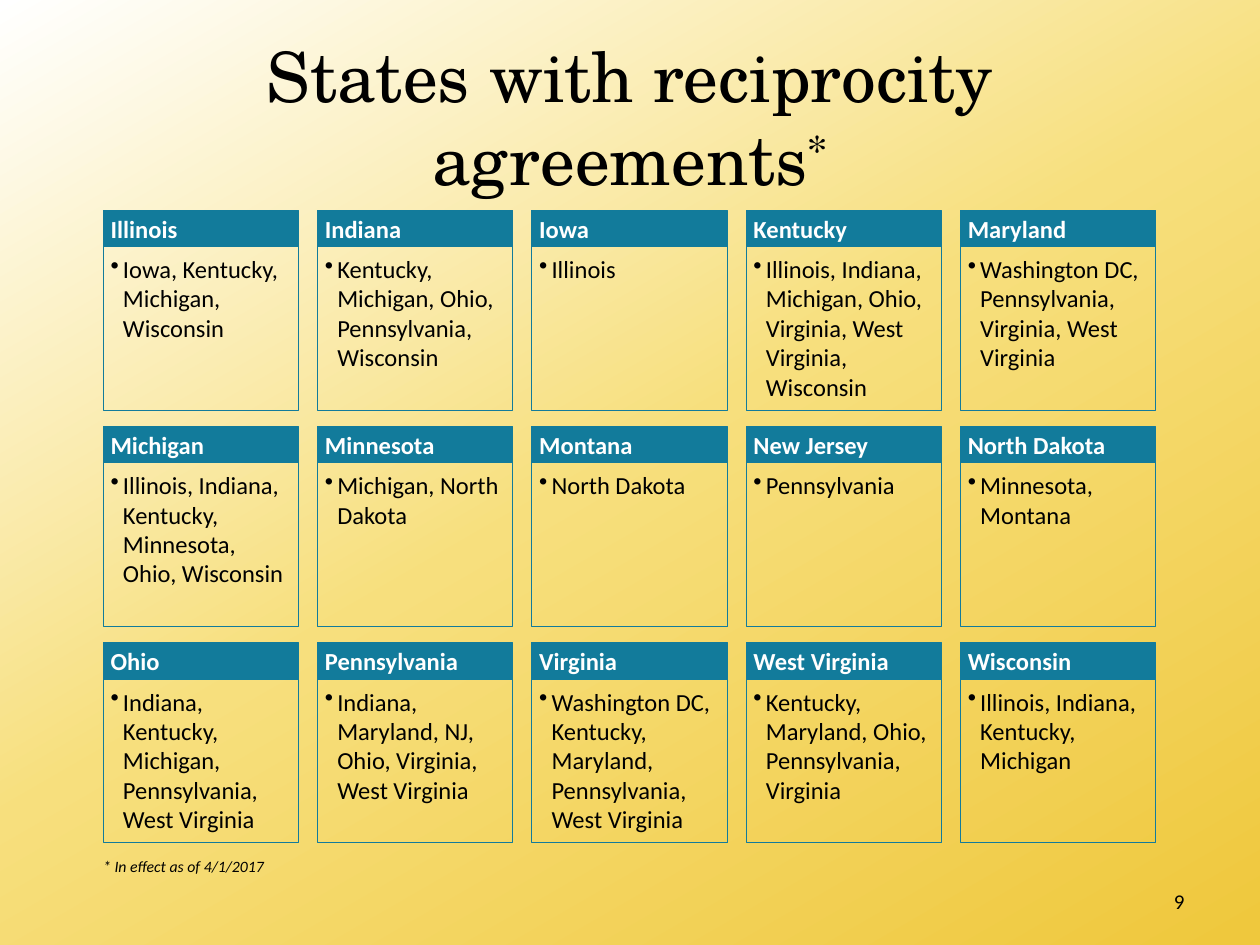
from copy import deepcopy

from lxml import etree
from pptx import Presentation
from pptx.dml.color import RGBColor
from pptx.enum.shapes import MSO_SHAPE
from pptx.enum.text import MSO_ANCHOR, MSO_AUTO_SIZE, PP_ALIGN
from pptx.oxml.ns import qn
from pptx.util import Cm, Pt

RECTANGLE = MSO_SHAPE.RECTANGLE
TOP, MIDDLE = MSO_ANCHOR.TOP, MSO_ANCHOR.MIDDLE
LEFT, CENTER, RIGHT = PP_ALIGN.LEFT, PP_ALIGN.CENTER, PP_ALIGN.RIGHT
NO_AUTOFIT = MSO_AUTO_SIZE.NONE

COLORS = {
    "black": "000000",
    "white": "FFFFFF",
    "teal": "127B9B",
    "pale_gold": "F7DF7D",
    "gold": "EFC83D",
}
BODY_FONT, TITLE_FONT = "Calibri", "TeX Gyre Schola"
BACKGROUND_STOPS = [(0, "white"), (0.49, "pale_gold"), (0.99, "gold")]
COLUMNS = 5
AGREEMENTS = [
    ("Illinois", "Iowa, Kentucky, Michigan, Wisconsin"),
    ("Indiana", "Kentucky, Michigan, Ohio, Pennsylvania, Wisconsin"),
    ("Iowa", "Illinois"),
    ("Kentucky", "Illinois, Indiana, Michigan, Ohio, Virginia, West Virginia, Wisconsin"),
    ("Maryland", "Washington DC, Pennsylvania, Virginia, West Virginia"),
    ("Michigan", "Illinois, Indiana, Kentucky, Minnesota, Ohio, Wisconsin"),
    ("Minnesota", "Michigan, North Dakota"),
    ("Montana", "North Dakota"),
    ("New Jersey", "Pennsylvania"),
    ("North Dakota", "Minnesota, Montana"),
    ("Ohio", "Indiana, Kentucky, Michigan, Pennsylvania, West Virginia"),
    ("Pennsylvania", "Indiana, Maryland, NJ, Ohio, Virginia, West Virginia"),
    ("Virginia", "Washington DC, Kentucky, Maryland, Pennsylvania, West Virginia"),
    ("West Virginia", "Kentucky, Maryland, Ohio, Pennsylvania, Virginia"),
    ("Wisconsin", "Illinois, Indiana, Kentucky, Michigan"),
]


def rgb(name):
    """Return the named colour."""
    return RGBColor.from_string(COLORS[name])


def write_text(frame, text, size=14, font=BODY_FONT, color="black", bold=False,
               italic=False, align=LEFT, anchor=TOP, inset=None, after=0):
    """Write one formatted paragraph into a text frame and return it."""
    frame.word_wrap = True
    frame.auto_size = NO_AUTOFIT
    frame.vertical_anchor = anchor
    if inset is not None:
        frame.margin_left = frame.margin_right = Cm(inset)
        frame.margin_top = frame.margin_bottom = Cm(inset)
    para = frame.paragraphs[0]
    para.alignment = align
    para.space_before, para.space_after = Pt(0), Pt(after)
    span = para.add_run()
    span.text = text
    span.font.size, span.font.name = Pt(size), font
    span.font.bold, span.font.italic = bold, italic
    span.font.color.rgb = rgb(color)
    return para


def add_bullet(para, indent):
    """Give a paragraph a round bullet with a hanging indent."""
    para.level = 1
    properties = para._p.get_or_add_pPr()
    properties.set("marL", str(Cm(indent)))
    properties.set("indent", str(-Cm(indent)))
    etree.SubElement(properties, qn("a:buChar")).set("char", "•")


def paint_background(page):
    """Fill the page with a diagonal three-colour gradient."""
    fill = page.background.fill
    fill.gradient()
    fill.gradient_angle = 300
    stop_list = page.element.find(".//" + qn("a:gsLst"))
    stop_list.append(deepcopy(stop_list[-1]))
    for stop, (position, color) in zip(fill.gradient_stops, BACKGROUND_STOPS):
        stop.position = position
        stop.color.rgb = rgb(color)


def add_title(page, left, top, width, height):
    """Place the title with its raised footnote mark."""
    title = page.shapes.title
    title.left, title.top = Cm(left), Cm(top)
    title.width, title.height = Cm(width), Cm(height)
    para = write_text(title.text_frame, "States with reciprocity agreements",
                      size=39.6, font=TITLE_FONT, align=CENTER, anchor=MIDDLE)
    mark = deepcopy(para.runs[0]._r)
    para._p.append(mark)
    para.runs[1].text = "*"
    para.runs[1].font._element.set("baseline", "30000")


def add_panel(page, left, top, width, height, fill=None):
    """Add a teal-edged rectangle and return its text frame."""
    box = page.shapes.add_shape(RECTANGLE, Cm(left), Cm(top), Cm(width), Cm(height))
    box.shadow.inherit = False
    box.line.color.rgb = rgb("teal")
    box.line.width = Pt(0.5)
    if fill:
        box.fill.solid()
        box.fill.fore_color.rgb = rgb(fill)
    else:
        box.fill.background()
    return box.text_frame


def add_state_card(page, state, partners, left, top, width, height):
    """Draw a state heading above the list of its partner states."""
    heading_height = 0.73
    heading = add_panel(page, left, top, width, heading_height, fill="teal")
    write_text(heading, state, color="white", bold=True, anchor=MIDDLE,
               inset=0.15, after=6)
    body = add_panel(page, left, top + heading_height, width, height - heading_height)
    add_bullet(write_text(body, partners, inset=0.15, after=6), indent=0.25)


def add_state_grid(page, left, top, width, height):
    """Spread the state cards evenly over the given box."""
    card_width, card_height = 3.94, 4.03
    rows = len(AGREEMENTS) // COLUMNS
    column_step = (width - card_width) / (COLUMNS - 1)
    row_step = (height - card_height) / (rows - 1)
    for index, (state, partners) in enumerate(AGREEMENTS):
        row, column = divmod(index, COLUMNS)
        add_state_card(page, state, partners, left + column * column_step,
                       top + row * row_step, card_width, card_height)


def add_label(page, text, left, top, width, height, **text_format):
    """Add a text box holding one formatted line."""
    box = page.shapes.add_textbox(Cm(left), Cm(top), Cm(width), Cm(height))
    write_text(box.text_frame, text, **text_format)


def main():
    """Build the slide and save the deck."""
    deck = Presentation()
    deck.slide_width, deck.slide_height = Cm(25.4), Cm(19.05)
    page = deck.slides.add_slide(deck.slide_layouts.get_by_name("Title Only"))
    paint_background(page)
    add_title(page, 1.27, 0.76, 22.86, 3.18)
    add_state_grid(page, 2.08, 4.24, 21.22, 12.75)
    add_label(page, "* In effect as of 4/1/2017", 2.08, 17.27, 10.21, 0.38,
              size=9, italic=True, inset=0)
    add_label(page, "9", 18.21, 17.65, 5.92, 1.02, size=12, align=RIGHT, anchor=MIDDLE)
    deck.save("out.pptx")


if __name__ == "__main__":
    main()
